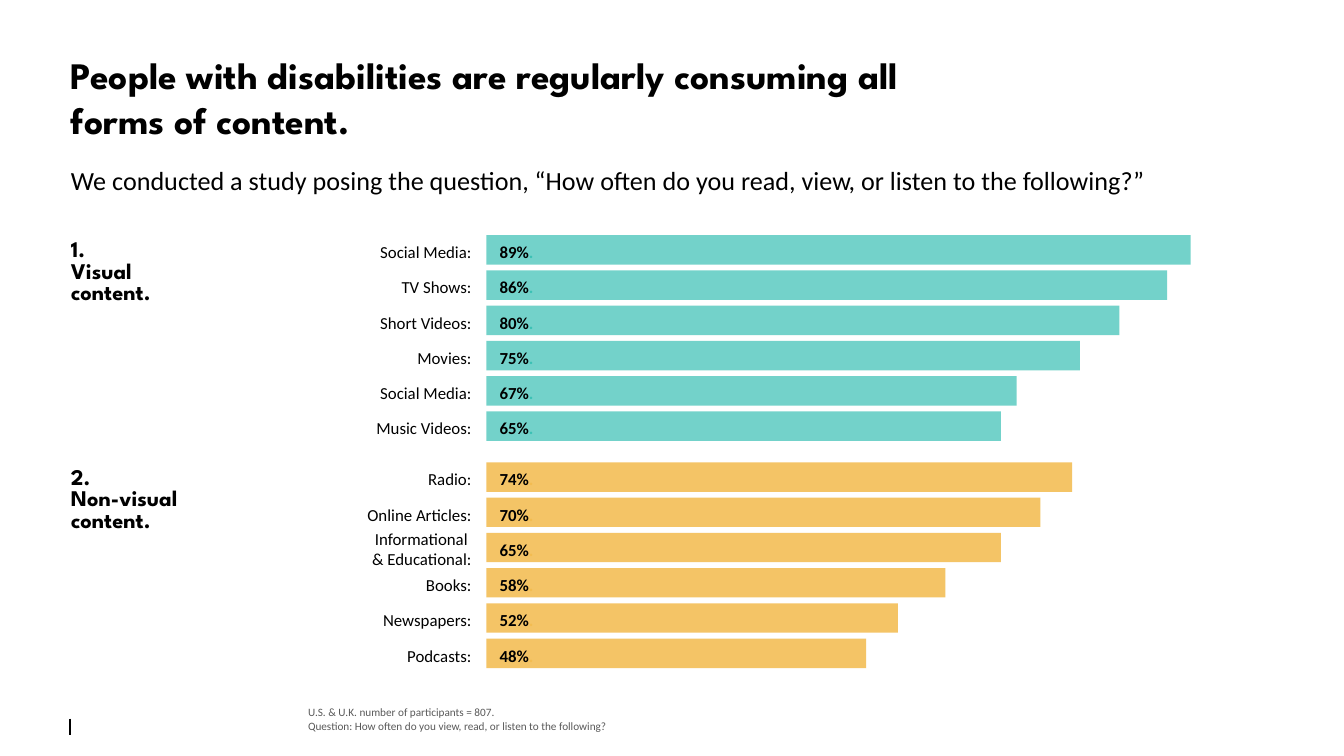
from pptx import Presentation
from pptx.dml.color import RGBColor
from pptx.enum.shapes import MSO_CONNECTOR as Connector, MSO_SHAPE as Shape
from pptx.enum.text import MSO_ANCHOR as Anchor, PP_ALIGN as Align
from pptx.oxml.ns import qn
from pptx.util import Pt
from lxml.etree import SubElement

BLACK = RGBColor(0x00, 0x00, 0x00)
WHITE = RGBColor(0xFF, 0xFF, 0xFF)
GRAY = RGBColor(0x59, 0x59, 0x59)
TEAL = RGBColor(0x3B, 0xC1, 0xB5)
AMBER = RGBColor(0xF3, 0xBC, 0x51)

HEADING, BODY = "League Spartan", "Calibri"
MARGIN = 38
BAR_LEFT, BAR_HEIGHT, BAR_PITCH = 260.6, 15.8, 18.88
POINTS_PER_PERCENT = 4.24
LABEL_WIDTH = 102

VISUAL = [("Social Media:", 89), ("TV Shows:", 86), ("Short Videos:", 80),
          ("Movies:", 75), ("Social Media:", 67), ("Music Videos:", 65)]
NON_VISUAL = [("Radio:", 74), ("Online Articles:", 70),
              ("Informational \n& Educational:", 65), ("Books:", 58),
              ("Newspapers:", 52), ("Podcasts:", 48)]


def write(frame, text, size=9, font=BODY, color=BLACK, bold=False, align=Align.LEFT,
          anchor=Anchor.TOP, spacing=None, inset=None, tail="", tail_color=None):
    frame.word_wrap = True
    frame.vertical_anchor = anchor
    if inset is not None:
        frame.margin_left = frame.margin_right = Pt(inset)
        frame.margin_top = frame.margin_bottom = Pt(inset)
    for index, line in enumerate(text.split("\n")):
        paragraph = frame.add_paragraph() if index else frame.paragraphs[0]
        paragraph.alignment = align
        if spacing:
            paragraph.line_spacing = spacing
        for content, tint in ((line, color), (tail, tail_color)):
            if content:
                run = paragraph.add_run()
                run.text = content
                run.font.name, run.font.size, run.font.bold = font, Pt(size), bold
                run.font.color.rgb = tint


class ContentSlide:
    """Draws the elements of the content consumption slide in one style."""

    def __init__(self, slide):
        self.shapes = slide.shapes

    def text(self, left, top, width, height, text, **style):
        box = self.shapes.add_textbox(Pt(left), Pt(top), Pt(width), Pt(height))
        write(box.text_frame, text, **style)

    def heading(self, left, top, width, height, text, **style):
        self.text(left, top, width, height, text, font=HEADING, bold=True, inset=0, **style)

    def block(self, left, top, width, height, fill, text, opacity=100, **style):
        block = self.shapes.add_shape(Shape.RECTANGLE, Pt(left), Pt(top), Pt(width), Pt(height))
        block.shadow.inherit = False
        block.line.fill.background()
        block.fill.solid()
        block.fill.fore_color.rgb = fill
        if opacity < 100:
            tint = block._element.spPr.find(".//" + qn("a:srgbClr"))
            SubElement(tint, qn("a:alpha")).set("val", str(opacity * 1000))
        write(block.text_frame, text, **style)

    def rule(self, left, top, bottom):
        rule = self.shapes.add_connector(Connector.STRAIGHT, Pt(left), Pt(top), Pt(left), Pt(bottom))
        rule.line.color.rgb = BLACK
        rule.line.width = Pt(1.25)
        SubElement(rule._element.spPr, qn("a:effectLst"))

    def section(self, top, title, rows, color, opacity):
        self.heading(MARGIN, top + 3, 68, 50, title, size=12, spacing=0.8)
        for index, (medium, percent) in enumerate(rows):
            row_top = top + index * BAR_PITCH
            extra = medium.count("\n") * 6
            self.text(BAR_LEFT - 1 - LABEL_WIDTH, row_top - extra, LABEL_WIDTH,
                      BAR_HEIGHT + extra, medium, align=Align.RIGHT)
            self.block(BAR_LEFT, row_top, percent * POINTS_PER_PERCENT, BAR_HEIGHT, color,
                       f"{percent}%", opacity=opacity, bold=True, tail=".", tail_color=color)


def main():
    deck = Presentation()
    deck.slide_width, deck.slide_height = Pt(720), Pt(405)
    page = ContentSlide(deck.slides.add_slide(deck.slide_layouts[6]))
    page.rule(37.5, 385, 394)
    page.heading(MARGIN, 28, 480, 44,
                 "People with disabilities are regularly consuming all forms of content.", size=20)
    page.text(MARGIN, 88, 642, 21,
              "We conducted a study posing the question, "
              "“How often do you read, view, or listen to the following?”", size=14, inset=0)
    page.section(126, "1.\nVisual\ncontent.", VISUAL, TEAL, 71)
    page.section(247.7, "2.\nNon-visual \ncontent.", NON_VISUAL, AMBER, 88)
    page.block(165, 373, 409, 19.5, WHITE,
               "U.S. & U.K. number of participants = 807.\n"
               "Question: How often do you view, read, or listen to the following?",
               size=6, color=GRAY, anchor=Anchor.BOTTOM, inset=0)
    deck.save("out.pptx")


if __name__ == "__main__":
    main()
